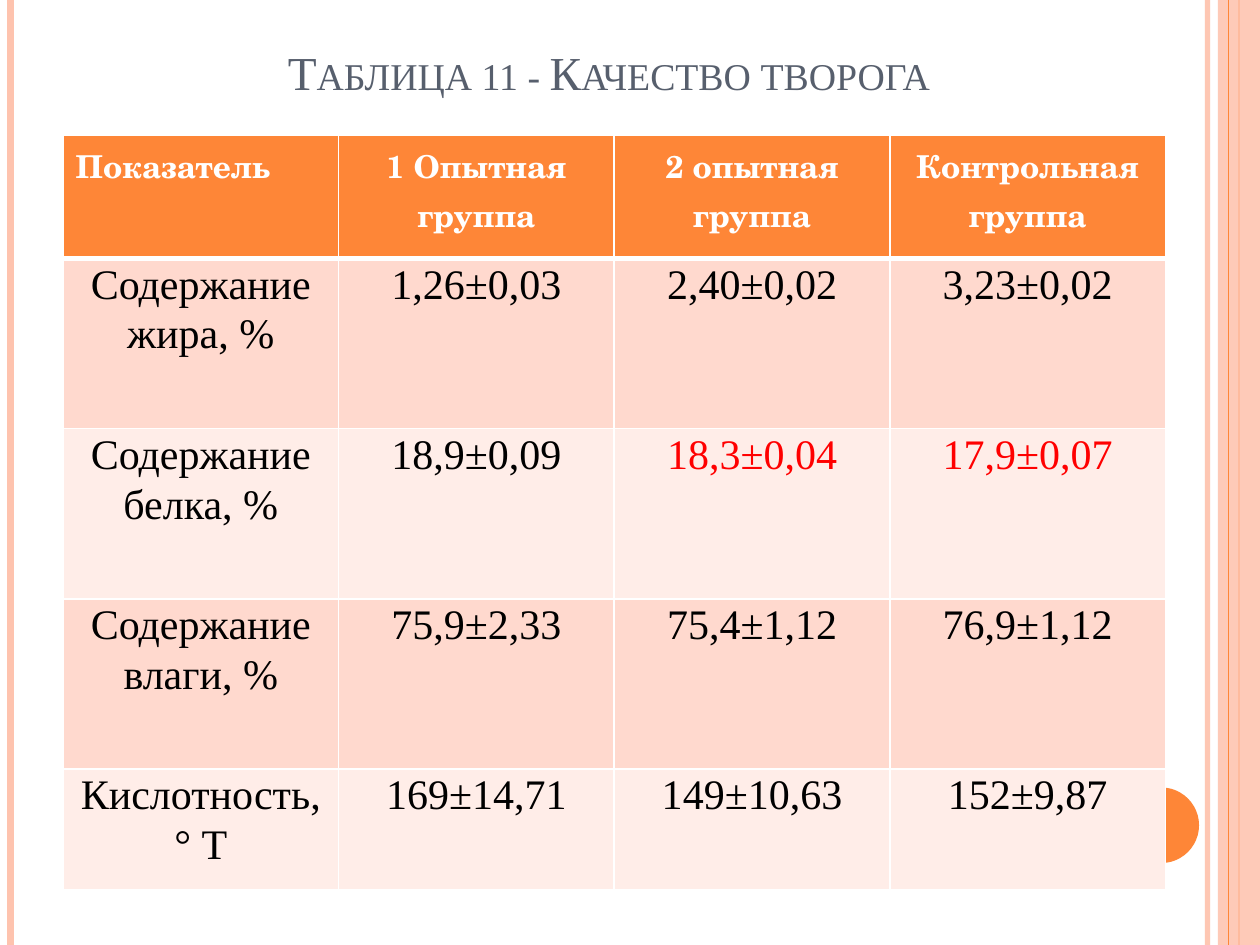
import pptx
import pptx.util
import pptx.dml.color
import pptx.enum.shapes
import pptx.enum.text
import pptx.oxml.ns
import lxml.etree
from dataclasses import dataclass

Pt = pptx.util.Pt
Align = pptx.enum.text.PP_ALIGN
Anchor = pptx.enum.text.MSO_ANCHOR
Shapes = pptx.enum.shapes.MSO_SHAPE


@dataclass(frozen=True)
class Theme:
    accent: str = "FE8637"
    peach: str = "FEC3AE"
    title: str = "575F6D"
    white: str = "FFFFFF"
    black: str = "000000"
    red: str = "FF0000"
    bands: tuple = ("FFD9CE", "FFEDE8")
    header_font: str = "TeX Gyre Schola"
    body_font: str = "Times New Roman"
    title_size: float = 27
    header_size: float = 18
    body_size: float = 24


THEME = Theme()
SLIDE_WIDTH, SLIDE_HEIGHT = 720, 540
HEADERS = ["Показатель", "1 Опытная группа", "2 опытная группа", "Контрольная группа"]
ROWS = [
    ["Содержание жира, %", "1,26±0,03", "2,40±0,02", "3,23±0,02"],
    ["Содержание белка, %", "18,9±0,09", "18,3±0,04", "17,9±0,07"],
    ["Содержание влаги, %", "75,9±2,33", "75,4±1,12", "76,9±1,12"],
    ["Кислотность, ° Т", "169±14,71", "149±10,63", "152±9,87"],
]
ROW_HEIGHTS = [70.5, 97.2, 97.2, 97.2, 69]
RED_CELLS = {(2, 2), (2, 3)}


def rgb(color):
    return pptx.dml.color.RGBColor.from_string(color)


def apply_format(target, values):
    for name, value in values.items():
        setattr(target, name, value)


def add_child(parent, tag, **attributes):
    return lxml.etree.SubElement(parent, pptx.oxml.ns.qn(tag), attributes)


def set_opacity(element, percent):
    for color in element.iter(pptx.oxml.ns.qn("a:srgbClr")):
        add_child(color, "a:alpha", val=str(percent * 1000))


def add_stripe(slide, x, color, width, opacity=100):
    line = slide.shapes.add_connector(
        pptx.enum.shapes.MSO_CONNECTOR.STRAIGHT, Pt(x), Pt(0), Pt(x), Pt(SLIDE_HEIGHT))
    line.line.color.rgb = rgb(color)
    line.line.width = Pt(width)
    properties = line._element.spPr
    if opacity < 100:
        set_opacity(properties, opacity)
    add_child(properties, "a:effectLst")


def add_filled_shape(slide, kind, box, color, opacity=100):
    shape = slide.shapes.add_shape(kind, *map(Pt, box))
    shape.shadow.inherit = False
    shape.fill.solid()
    shape.fill.fore_color.rgb = rgb(color)
    shape.line.fill.background()
    if opacity < 100:
        set_opacity(shape._element.spPr, opacity)


def write_text(frame, text, color, paragraph_format, font_format):
    paragraph = frame.paragraphs[0]
    apply_format(paragraph, paragraph_format)
    run = paragraph.add_run()
    run.text = text
    run.font.color.rgb = rgb(color)
    apply_format(run.font, font_format)
    return run


def add_title(slide, text):
    title = slide.shapes.add_textbox(Pt(36), Pt(21.6), Pt(624), Pt(38.9))
    apply_format(title.text_frame, {"word_wrap": True, "vertical_anchor": Anchor.BOTTOM})
    run = write_text(title.text_frame, text, THEME.title, {"alignment": Align.CENTER},
                     {"name": THEME.body_font, "size": Pt(THEME.title_size)})
    run.font._element.set("cap", "small")


def add_borders(cell, widths):
    properties = cell._tc.get_or_add_tcPr()
    for side, width in widths.items():
        border = add_child(properties, f"a:ln{side}", w=str(Pt(width)))
        add_child(add_child(border, "a:solidFill"), "a:srgbClr", val=THEME.white)


def fill_cell(cell, row, column, text):
    is_header = row == 0
    add_borders(cell, {"L": 1, "R": 1, "T": 3 if row == 1 else 1, "B": 3 if is_header else 1})
    cell.fill.solid()
    if is_header:
        fill, color = THEME.accent, THEME.white
        alignment = Align.LEFT if column == 0 else Align.CENTER
        paragraph_format = {"alignment": alignment}
        font_format = {"name": THEME.header_font, "size": Pt(THEME.header_size), "bold": True}
    else:
        fill = THEME.bands[(row - 1) % 2]
        color = THEME.red if (row, column) in RED_CELLS else THEME.black
        paragraph_format = {"alignment": Align.CENTER, "line_spacing": 1.07}
        font_format = {"name": THEME.body_font, "size": Pt(THEME.body_size), "bold": False}
        apply_format(cell, {"margin_left": Pt(5), "margin_right": Pt(5),
                            "margin_top": 0, "margin_bottom": 0})
    cell.fill.fore_color.rgb = rgb(fill)
    write_text(cell.text_frame, text, color, paragraph_format, font_format)


def add_quality_table(slide):
    content = [HEADERS] + ROWS
    table = slide.shapes.add_table(len(content), len(HEADERS), Pt(36), Pt(77.3),
                                   Pt(630), Pt(sum(ROW_HEIGHTS))).table
    for column in table.columns:
        column.width = Pt(630 / len(HEADERS))
    for row, texts in enumerate(content):
        table.rows[row].height = Pt(ROW_HEIGHTS[row])
        for column, text in enumerate(texts):
            fill_cell(table.cell(row, column), row, column, text)


def main():
    presentation = pptx.Presentation()
    apply_format(presentation, {"slide_width": Pt(SLIDE_WIDTH), "slide_height": Pt(SLIDE_HEIGHT)})
    slide = presentation.slides.add_slide(presentation.slide_layouts[6])
    add_stripe(slide, 690, THEME.peach, 3, 93)
    add_stripe(slide, 6, THEME.peach, 4.5)
    add_stripe(slide, 708, THEME.accent, 1.5)
    add_filled_shape(slide, Shapes.RECTANGLE, (696, 0, 24, SLIDE_HEIGHT), THEME.peach, 87)
    add_stripe(slide, 702, THEME.accent, 0.75)
    add_filled_shape(slide, Shapes.OVAL, (642, 450, 43.2, 43.2), THEME.accent)
    add_title(slide, "Таблица 11 - Качество творога")
    add_quality_table(slide)
    presentation.save("out.pptx")


if __name__ == "__main__":
    main()
